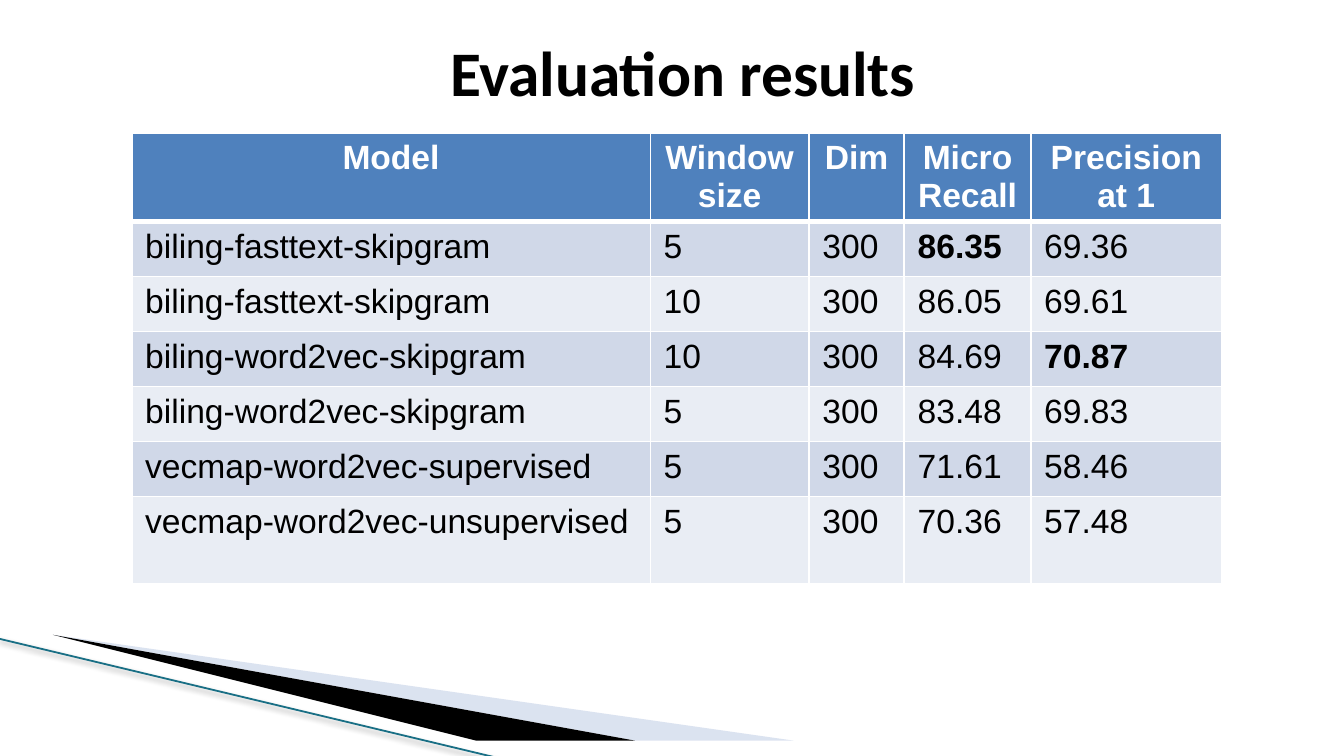
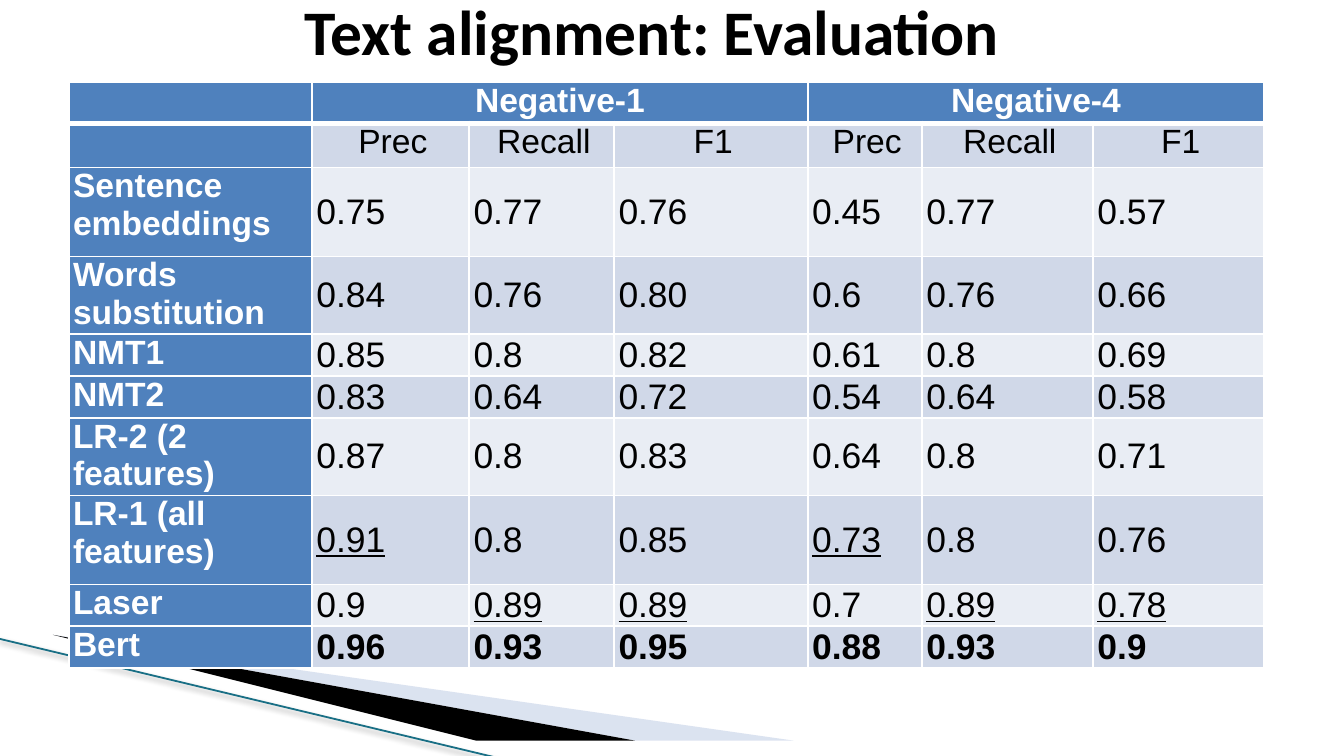
"""Build two slides of evaluation results, each a title and a table over a corner ornament."""
from lxml import etree
from pptx import Presentation
from pptx import util as u
from pptx.dml.color import RGBColor
from pptx.enum import shapes, text
from pptx.oxml import ns, parse_xml

BLACK, WHITE, BLUE = "000000", "FFFFFF", "4F81BD"
BANDS = ("E9EDF4", "D0D8E8")
PALE_BLUE, TEAL = "A7B9DB", "196F85"
CENTER, LEFT = text.PP_ALIGN.CENTER, text.PP_ALIGN.LEFT
TOP, MIDDLE = text.MSO_ANCHOR.TOP, text.MSO_ANCHOR.MIDDLE

MODEL_COLUMNS = (9.8, 3, 1.8, 2.39, 3.61)
MODEL_HEIGHTS = (1.04,) * 6 + (1.65,)
MODEL_ROWS = (
    ("Model", "Window size", "Dim", "Micro Recall", "Precision at 1"),
    ("biling-fasttext-skipgram", "5", "300", "*86.35", "69.36"),
    ("biling-fasttext-skipgram", "10", "300", "86.05", "69.61"),
    ("biling-word2vec-skipgram", "10", "300", "84.69", "*70.87"),
    ("biling-word2vec-skipgram", "5", "300", "83.48", "69.83"),
    ("vecmap-word2vec-supervised", "5", "300", "71.61", "58.46"),
    ("vecmap-word2vec-unsupervised", "5", "300", "70.36", "57.48"),
)

ALIGNMENT_COLUMNS = (4.6, 2.97, 2.74, 3.66, 2.16, 3.23, 3.23)
ALIGNMENT_HEIGHTS = (0.74, 0.84, 1.68, 1.47, 0.79, 0.79, 1.47, 1.68, 0.79, 0.79)
ALIGNMENT_ROWS = (
    ("", "Negative-1", "", "", "Negative-4", "", ""),
    ("",) + ("Prec", "Recall", "F1") * 2,
    ("Sentence embeddings", "0.75", "0.77", "0.76", "0.45", "0.77", "0.57"),
    ("Words substitution", "0.84", "0.76", "0.80", "0.6", "0.76", "0.66"),
    ("NMT1", "0.85", "0.8", "0.82", "0.61", "0.8", "0.69"),
    ("NMT2", "0.83", "0.64", "0.72", "0.54", "0.64", "0.58"),
    ("LR-2 (2 features)", "0.87", "0.8", "0.83", "0.64", "0.8", "0.71"),
    ("LR-1 (all features)", "_0.91", "0.8", "0.85", "_0.73", "0.8", "0.76"),
    ("Laser", "0.9", "_0.89", "_0.89", "0.7", "_0.89", "_0.78"),
    ("Bert", "*0.96", "*0.93", "*0.95", "*0.88", "*0.93", "*0.9"),
)


def color(value):
    """Turn a hex string into a colour."""
    return RGBColor.from_string(value)


def write(frame, words, font="Arial", size=18, ink=BLACK, bold=False,
          underline=False, align=LEFT, indent=0):
    """Put one formatted paragraph into a text frame."""
    paragraph = frame.paragraphs[0]
    paragraph.alignment = align
    if indent:
        paragraph._p.get_or_add_pPr().set("marL", str(u.Cm(indent)))
    if words:
        run = paragraph.add_run()
        run.text = words
        run.font.name, run.font.size = font, u.Pt(size)
        run.font.bold, run.font.underline = bold, underline
        run.font.color.rgb = color(ink)


def add_wedge(slide, points, fill, opacity=100):
    """Draw a filled outline through points given in centimetres."""
    builder = slide.shapes.build_freeform(*points[0], scale=u.Cm(1))
    builder.add_line_segments(points[1:], close=True)
    shape = builder.convert_to_shape()
    shape.shadow.inherit = False
    shape.line.fill.background()
    shape.fill.solid()
    shape.fill.fore_color.rgb = color(fill)
    if opacity < 100:
        tint = shape.element.spPr.find(".//" + ns.qn("a:srgbClr"))
        etree.SubElement(tint, ns.qn("a:alpha")).set("val", str(opacity * 1000))
    return shape


def add_edge(slide, start, end):
    """Draw the thin ornament line with its soft shadow."""
    line = slide.shapes.add_connector(
        shapes.MSO_CONNECTOR.STRAIGHT, *map(u.Cm, start + end))
    line.line.color.rgb = color(TEAL)
    line.line.width = u.Pt(0.96)
    line.element.spPr.append(parse_xml(
        f'<a:effectLst {ns.nsdecls("a")}><a:outerShdw blurRad="{u.Pt(3.1)}" '
        f'dist="{u.Pt(1.6)}" dir="5400000"><a:srgbClr val="{BLACK}">'
        '<a:alpha val="38000"/></a:srgbClr></a:outerShdw></a:effectLst>'))
    return line


def add_ornament(slide):
    """Draw the corner ornament and move it to the layout that all slides share."""
    parts = (
        add_wedge(slide, ((1.4, 12.4), (15.11, 14.3), (11.58, 14.3)), PALE_BLUE, 40),
        add_wedge(slide, ((1.35, 12.37), (11.61, 14.3), (9.45, 14.33), (1.37, 12.4)), BLACK),
        add_edge(slide, (-0.03, 12.07), (9.42, 14.33)),
    )
    for number, part in enumerate(parts, 101):
        part.element.xpath(".//p:cNvPr")[0].set("id", str(number))
        slide.slide_layout.shapes.element.append(part.element)


def set_title(slide, words, left, top, width, height):
    """Place and format the title placeholder."""
    title = slide.shapes.title
    title.left, title.top, title.width, title.height = map(u.Cm, (left, top, width, height))
    frame = title.text_frame
    frame.auto_size = text.MSO_AUTO_SIZE.NONE
    frame.word_wrap = True
    frame.vertical_anchor = MIDDLE
    write(frame, words, font="Calibri", size=34, bold=True, align=CENTER)


def set_borders(cell, row):
    """Give a cell white borders, thicker below the header row."""
    properties = cell._tc.get_or_add_tcPr()
    widths = {"L": 1, "R": 1, "T": 3 if row == 1 else 1, "B": 3 if row == 0 else 1}
    for side, width in widths.items():
        properties.append(parse_xml(
            f'<a:ln{side} {ns.nsdecls("a")} w="{u.Pt(width)}"><a:solidFill>'
            f'<a:srgbClr val="{WHITE}"/></a:solidFill></a:ln{side}>'))


def add_table(slide, left, top, columns, heights, rows, merges=(), compact=False):
    """Add a banded table; * marks bold text, _ underlined, compact has row labels."""
    table = slide.shapes.add_table(
        len(rows), len(columns), *map(u.Cm, (left, top, sum(columns), sum(heights)))).table
    for column, width in zip(table.columns, columns):
        column.width = u.Cm(width)
    for row, height in zip(table.rows, heights):
        row.height = u.Cm(height)
    for first, last in merges:
        table.cell(0, first).merge(table.cell(0, last))
    for i, row in enumerate(rows):
        for j, words in enumerate(row):
            cell = table.cell(i, j)
            heading = i == 0 or (compact and j == 0)
            value = compact and i > 1 and j > 0
            set_borders(cell, i)
            cell.fill.solid()
            cell.fill.fore_color.rgb = color(BLUE if heading else BANDS[i % 2])
            cell.vertical_anchor = MIDDLE if value else TOP
            if compact:
                cell.margin_left = cell.margin_right = 0
                cell.margin_top = cell.margin_bottom = 0
            write(cell.text_frame, words.lstrip("*_"),
                  size=19 if value else 18,
                  ink=WHITE if heading else BLACK,
                  bold=heading or words.startswith("*"),
                  underline=words.startswith("_"),
                  align=CENTER if i == 0 or (compact and i == 1) else LEFT,
                  indent=0.08 if compact and i > 0 else 0)


def main():
    """Build and save the presentation."""
    presentation = Presentation()
    presentation.slide_width, presentation.slide_height = u.Cm(25.4), u.Cm(14.29)
    layout = presentation.slide_layouts[5]

    results = presentation.slides.add_slide(layout)
    add_ornament(results)
    set_title(results, "Evaluation results", 0.99, 0.15, 23.83, 2.39)
    add_table(results, 2.49, 2.51, MODEL_COLUMNS, MODEL_HEIGHTS, MODEL_ROWS)

    alignment = presentation.slides.add_slide(layout)
    set_title(alignment, "Text alignment: Evaluation", 3.1, 0.05, 18.44, 1.04)
    add_table(alignment, 1.3, 1.55, ALIGNMENT_COLUMNS, ALIGNMENT_HEIGHTS, ALIGNMENT_ROWS,
              merges=((1, 3), (4, 6)), compact=True)

    presentation.save("out.pptx")


if __name__ == "__main__":
    main()
